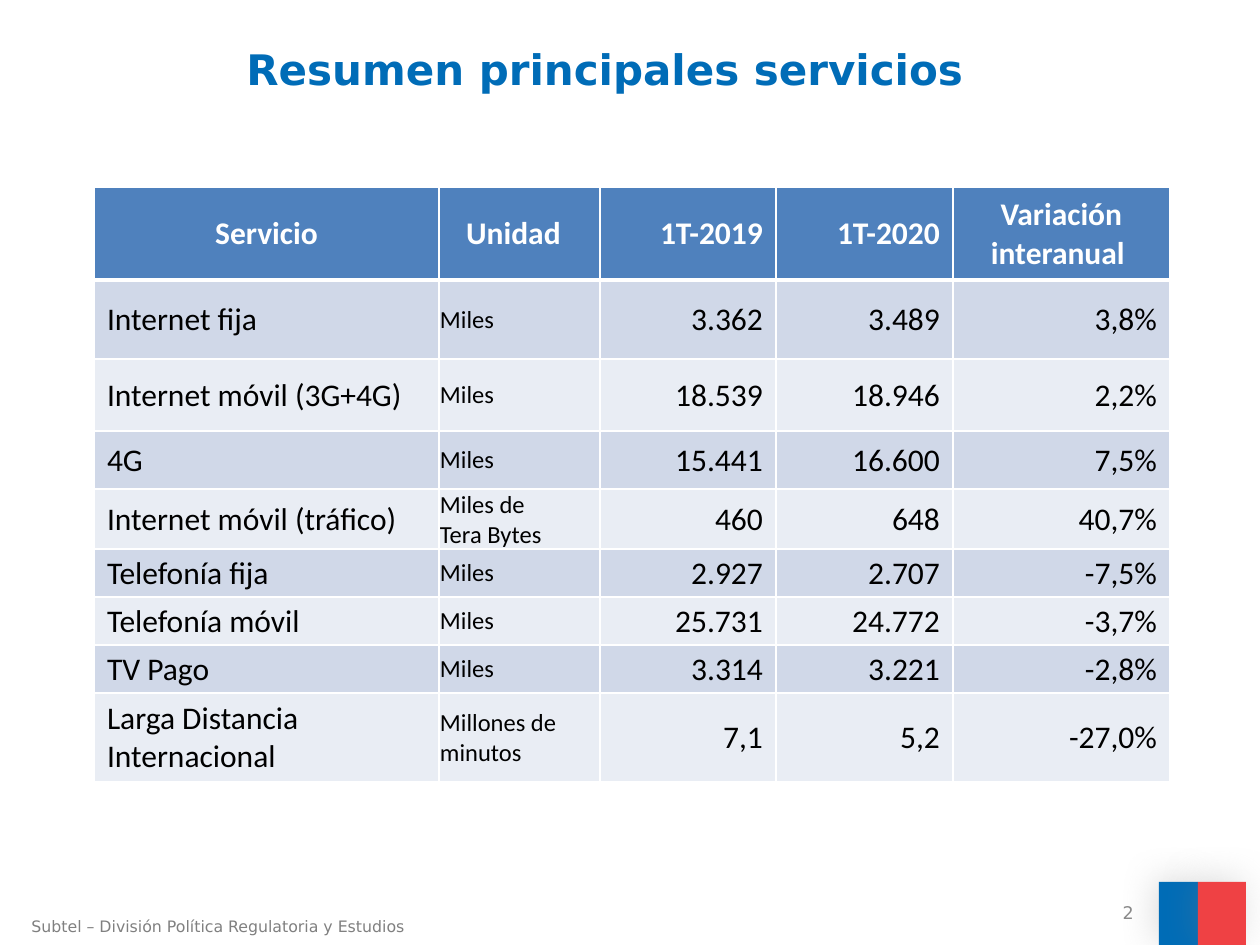
import pptx
import pptx.util
import pptx.dml.color
import pptx.enum.shapes
import pptx.enum.text
import pptx.oxml
import pptx.oxml.ns

HUES = {"blue": "006CB7", "red": "EF4144", "head": "4F81BD", "odd": "D0D8E8",
        "even": "E9EDF4", "white": "FFFFFF", "black": "000000",
        "gray": "808080", "page": "898989"}
LEFT, MID, RIGHT = (pptx.enum.text.PP_ALIGN.LEFT, pptx.enum.text.PP_ALIGN.CENTER,
                    pptx.enum.text.PP_ALIGN.RIGHT)
TOP, MIDDLE = pptx.enum.text.MSO_ANCHOR.TOP, pptx.enum.text.MSO_ANCHOR.MIDDLE

COLS = [345, 161, 176, 177, 217]
TALL = [93, 79, 72, 58, 60, 48, 48, 48, 89]
ROWS = [
    ["Servicio", "Unidad", "1T-2019", "1T-2020", "Variación interanual "],
    ["Internet fija", "Miles", "3.362", "3.489", "3,8%"],
    ["Internet móvil (3G+4G)", "Miles", "18.539", "18.946", "2,2%"],
    ["4G", "Miles", "15.441", "16.600", "7,5%"],
    ["Internet móvil (tráfico)", "Miles de\nTera Bytes", "460", "648", "40,7%"],
    ["Telefonía fija", "Miles", "2.927", "2.707", "-7,5%"],
    ["Telefonía móvil", "Miles", "25.731", "24.772", "-3,7%"],
    ["TV Pago", "Miles", "3.314", "3.221", "-2,8%"],
    ["Larga Distancia Internacional", "Millones de minutos", "7,1", "5,2", "-27,0%"],
]


def px(n):
    return pptx.util.Emu(round(n * 914400 / 126))


def rgb(name):
    return pptx.dml.color.RGBColor.from_string(HUES[name])


def node(xml):
    return pptx.oxml.parse_xml(xml.replace(">", f" {pptx.oxml.ns.nsdecls('a')}>", 1))


class Deck:
    """Holds the fonts and the current slide."""
    sans, body = "DejaVu Sans", "Calibri"

    def __init__(self, wide, high):
        self.file = pptx.Presentation()
        self.file.slide_width, self.file.slide_height = px(wide), px(high)
        self.slide = self.file.slides.add_slide(self.file.slide_layouts[6])

    def style(self, frame, hue, align, **font):
        for para in frame.paragraphs:
            para.alignment = align
            for run in para.runs:
                run.font.color.rgb = rgb(hue)
                for key, val in font.items():
                    setattr(run.font, key, val)

    def text(self, box, words, size, hue, align=LEFT, anchor=TOP, bold=False):
        frame = self.slide.shapes.add_textbox(*map(px, box)).text_frame
        frame.text = words
        for key, val in {"word_wrap": True, "vertical_anchor": anchor}.items():
            setattr(frame, key, val)
        self.style(frame, hue, align, name=self.sans, size=pptx.util.Pt(size), bold=bold)

    def block(self, box, hue):
        """Draw a borderless rectangle with a soft shadow."""
        kind = pptx.enum.shapes.MSO_SHAPE.RECTANGLE
        shape = self.slide.shapes.add_shape(kind, *map(px, box))
        shape.fill.solid()
        shape.fill.fore_color.rgb = rgb(hue)
        shape.line.fill.background()
        shape.shadow.inherit = False
        glow = node('<a:outerShdw blurRad="254000" dist="38100" dir="12900000">'
                    f'<a:srgbClr val="{HUES["gray"]}"><a:alpha val="25000"/>'
                    '</a:srgbClr></a:outerShdw>')
        shape.element.spPr.find(pptx.oxml.ns.qn("a:effectLst")).append(glow)

    def edges(self, cell, widths):
        """Rule the cell in white; widths maps each side to points."""
        props = cell._tc.get_or_add_tcPr()
        for i, (side, wide) in enumerate(widths.items()):
            props.insert(i, node(
                f'<a:ln{side} w="{pptx.util.Pt(wide)}"><a:solidFill>'
                f'<a:srgbClr val="{HUES["white"]}"/></a:solidFill></a:ln{side}>'))

    def cell(self, cell, words, row, col):
        head = row == 0
        cell.text = words
        pads = {"margin_left": 1 if head or col else 13,
                "margin_right": 13 if col and not (head and col == 4) else 1,
                "margin_top": 1, "margin_bottom": 0}
        for key, val in pads.items():
            setattr(cell, key, px(val))
        cell.vertical_anchor = MIDDLE
        cell.fill.solid()
        cell.fill.fore_color.rgb = rgb("head" if head else "odd" if row % 2 else "even")
        if head:
            align = RIGHT if col in (2, 3) else MID
        else:
            align = RIGHT if col > 1 else LEFT
        self.style(cell.text_frame, "white" if head else "black", align,
                   name=self.body, bold=head,
                   size=pptx.util.Pt(14 if col == 1 and not head else 18))
        self.edges(cell, {"L": 1, "R": 1, "T": 3 if row == 1 else 1, "B": 3 if head else 1})

    def table(self, left, top, cols, tall, rows):
        box = left, top, sum(cols), sum(tall)
        grid = self.slide.shapes.add_table(len(rows), len(cols), *map(px, box)).table
        for col, wide in zip(grid.columns, cols):
            col.width = px(wide)
        for r, (line, high) in enumerate(zip(rows, tall)):
            grid.rows[r].height = px(high)
            for c, words in enumerate(line):
                self.cell(grid.cell(r, c), words, r, c)


def main():
    deck = Deck(1260, 945)
    deck.block((1159, 882, 39, 63), "blue")
    deck.block((1198, 882, 48, 63), "red")
    deck.text((234, 37, 764, 64), "Resumen principales servicios", 24, "blue",
              anchor=MIDDLE, bold=True)
    deck.text((19, 911, 672, 32), "Subtel – División Política Regulatoria y Estudios",
              9, "gray")
    deck.table(94, 187, COLS, TALL, ROWS)
    deck.text((852, 900, 294, 26), "2", 10, "page", RIGHT, MIDDLE)
    deck.file.save("out.pptx")


if __name__ == "__main__":
    main()
